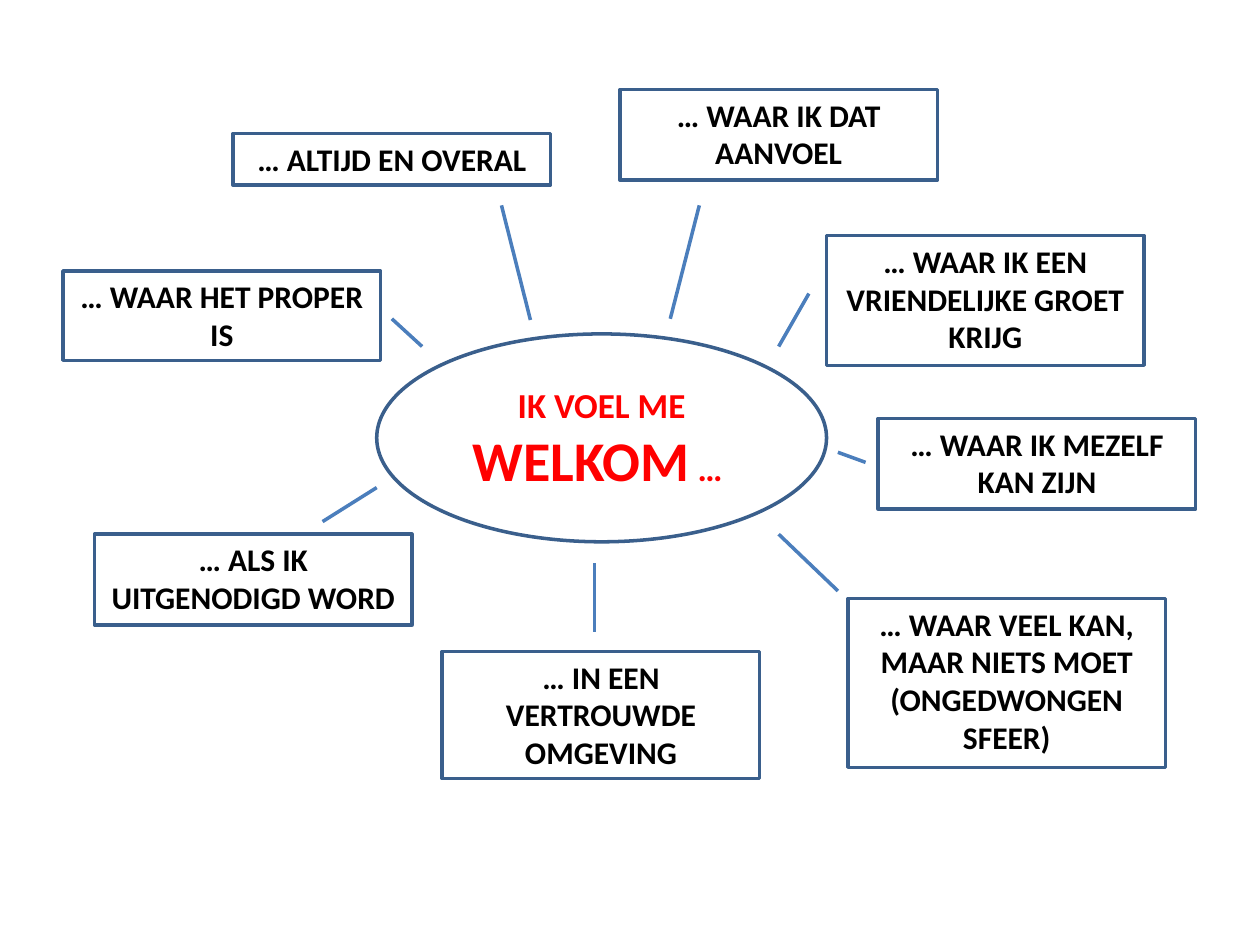
from dataclasses import dataclass

from pptx import Presentation
from pptx.dml.color import RGBColor
from pptx.enum.shapes import MSO_CONNECTOR as Connector, MSO_SHAPE as Shape
from pptx.enum.text import MSO_ANCHOR as Anchor, MSO_AUTO_SIZE as AutoSize, PP_ALIGN as Align
from pptx.oxml.ns import qn
from pptx.util import Inches, Pt


@dataclass(frozen=True)
class Theme:
    """Colours, font and sizes of the mind map."""
    font: str = "Calibri"
    outline: RGBColor = RGBColor(0x3A, 0x5F, 0x8C)
    spoke: RGBColor = RGBColor(0x4B, 0x7E, 0xBC)
    hub_text: RGBColor = RGBColor(0xFF, 0x00, 0x00)
    idea_text: RGBColor = RGBColor(0x00, 0x00, 0x00)
    idea_size: Pt = Pt(18)
    hub_size: Pt = Pt(20)
    welcome_size: Pt = Pt(32)
    stroke: Pt = Pt(2)


THEME = Theme()
IDEA_WIDTH = 2.52
HUB_BOX = (2.99, 2.65, 3.57, 1.65)
HUB_RUNS = [
    ("IK VOEL ME ", THEME.hub_size),
    ("WELKOM", THEME.welcome_size),
    (" … ", THEME.hub_size),
]
IDEAS = [
    ("… WAAR IK EEN VRIENDELIJKE GROET KRIJG", 6.56, 1.87, 1.03),
    ("… WAAR IK MEZELF KAN ZIJN", 6.97, 3.32, 0.72),
    ("… WAAR VEEL KAN, MAAR NIETS MOET (ONGEDWONGEN SFEER)", 6.73, 4.75, 1.34),
    ("… IN EEN VERTROUWDE OMGEVING", 3.51, 5.17, 1.01),
    ("… ALS IK UITGENODIGD WORD", 0.75, 4.24, 0.72),
    ("… WAAR HET PROPER IS", 0.5, 2.15, 0.71),
    ("… ALTIJD EN OVERAL", 1.85, 1.06, 0.41),
    ("… WAAR IK DAT AANVOEL", 4.92, 0.71, 0.72),
]
SPOKES = [
    (3.98, 1.63, 4.21, 2.54),
    (5.55, 1.63, 5.32, 2.53),
    (6.42, 2.33, 6.18, 2.75),
    (6.87, 3.67, 6.65, 3.59),
    (6.18, 4.24, 6.65, 4.69),
    (4.72, 4.47, 4.72, 5.02),
    (2.99, 3.87, 2.56, 4.14),
    (3.35, 2.75, 3.11, 2.53),
]


def add_outlined(slide, kind, box, runs, color):
    """Add an unfilled outlined shape with centred bold runs and return its text frame."""
    outlined = slide.shapes.add_shape(kind, *map(Inches, box))
    outlined.shadow.inherit = False
    outlined.fill.background()
    outlined.line.color.rgb = THEME.outline
    outlined.line.width = THEME.stroke
    frame = outlined.text_frame
    frame.word_wrap = True
    paragraph = frame.paragraphs[0]
    paragraph.alignment = Align.CENTER
    for words, size in runs:
        run = paragraph.add_run()
        run.text = words
        run.font.name = THEME.font
        run.font.size = size
        run.font.bold = True
        run.font.color.rgb = color
    return frame


def add_hub(slide, box):
    """Add the central ellipse with the opening words."""
    frame = add_outlined(slide, Shape.OVAL, box, HUB_RUNS, THEME.hub_text)
    frame.vertical_anchor = Anchor.MIDDLE


def add_idea(slide, words, box):
    """Add one box that completes the sentence of the hub."""
    runs = [(words, THEME.idea_size)]
    frame = add_outlined(slide, Shape.RECTANGLE, box, runs, THEME.idea_text)
    frame.vertical_anchor = Anchor.TOP
    frame.auto_size = AutoSize.SHAPE_TO_FIT_TEXT


def add_spoke(slide, ends):
    """Add one line between the hub and an idea."""
    spoke = slide.shapes.add_connector(Connector.STRAIGHT, *map(Inches, ends))
    spoke.line.color.rgb = THEME.spoke
    spoke.line.width = THEME.stroke
    properties = spoke._element.spPr
    properties.append(properties.makeelement(qn("a:effectLst"), {}))


def main():
    """Build the mind map and save it."""
    deck = Presentation()
    deck.slide_width, deck.slide_height = Inches(10), Inches(7.5)
    slide = deck.slides.add_slide(deck.slide_layouts[6])
    add_hub(slide, HUB_BOX)
    for words, left, top, height in IDEAS:
        add_idea(slide, words, (left, top, IDEA_WIDTH, height))
    for ends in SPOKES:
        add_spoke(slide, ends)
    deck.save("out.pptx")


if __name__ == "__main__":
    main()
